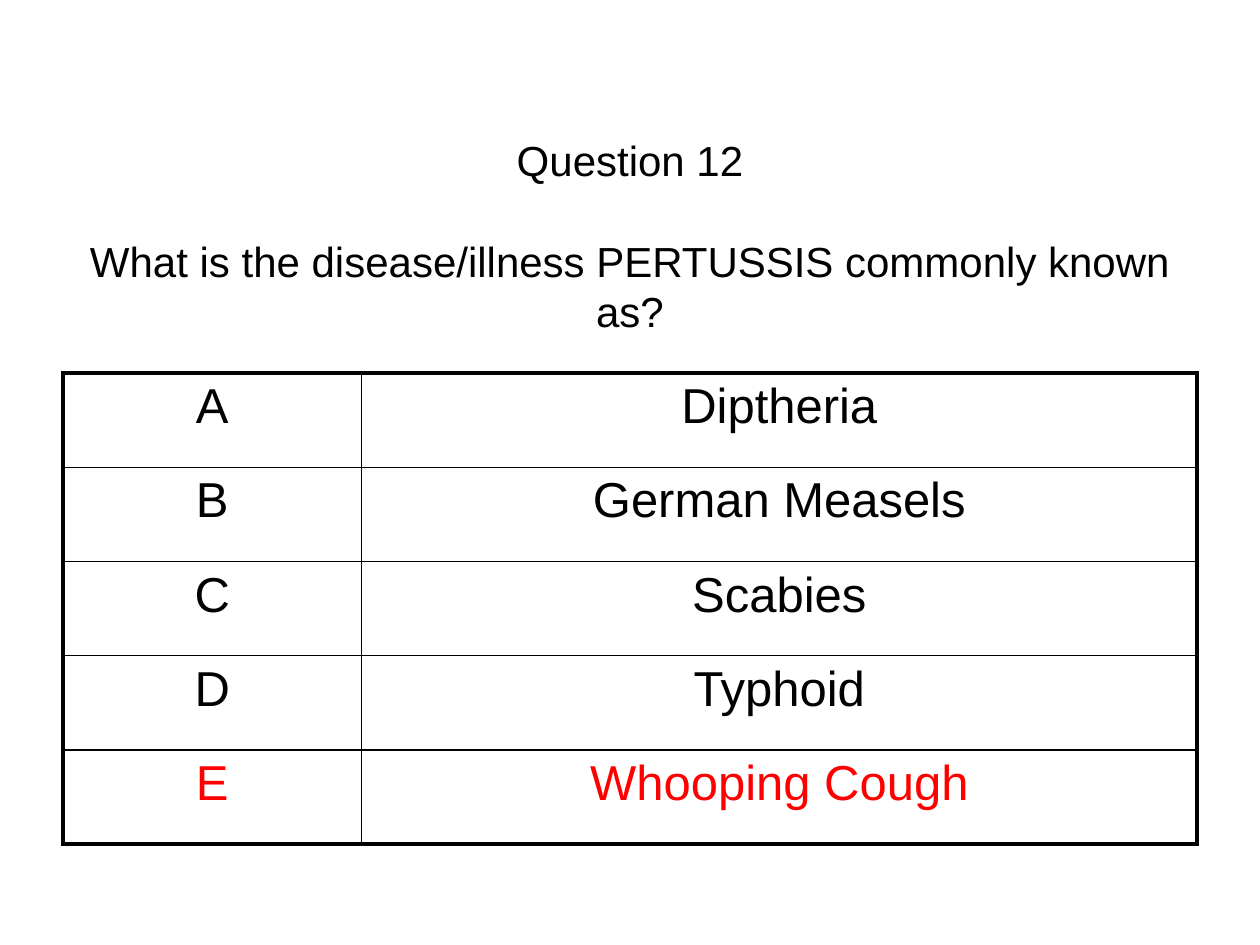
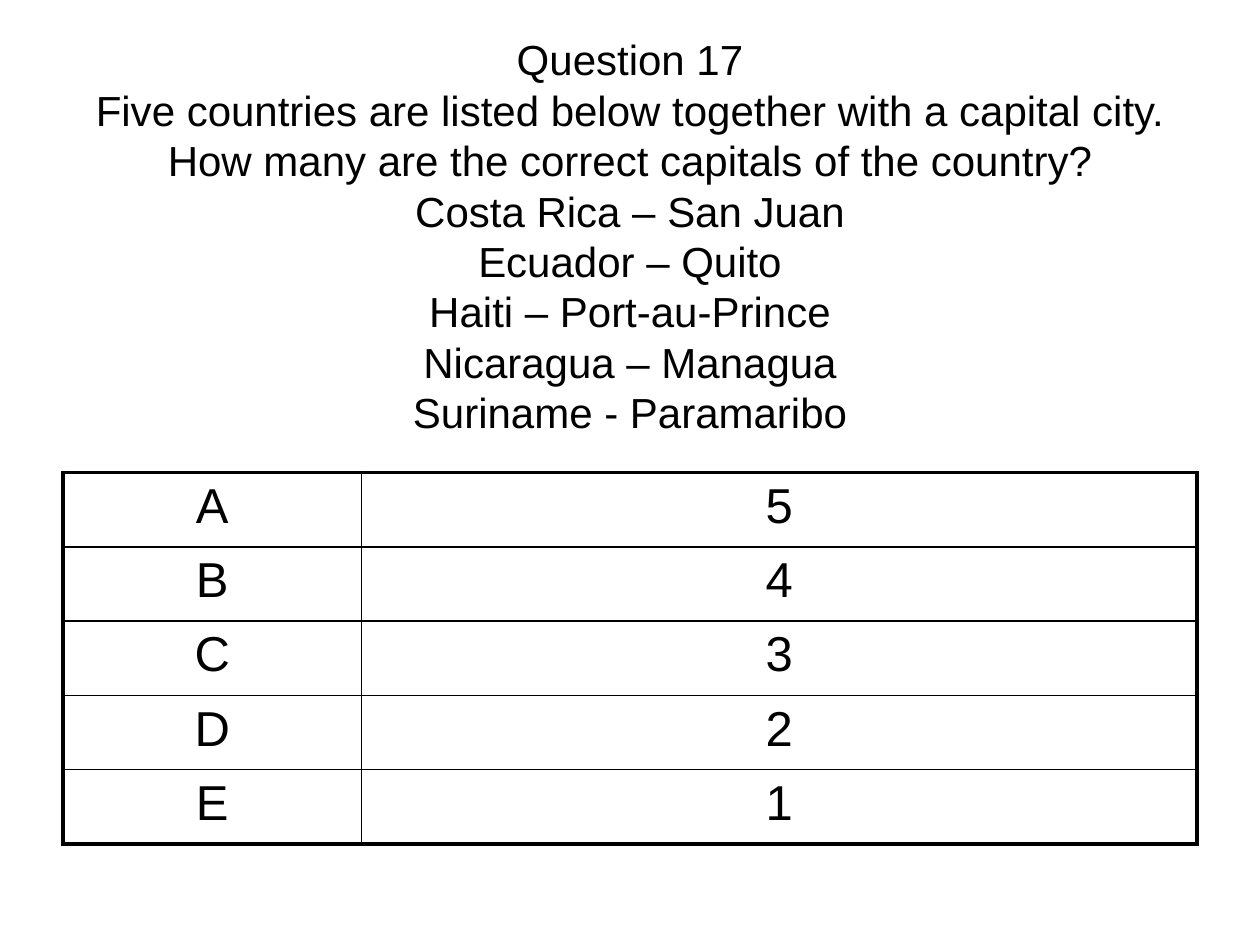
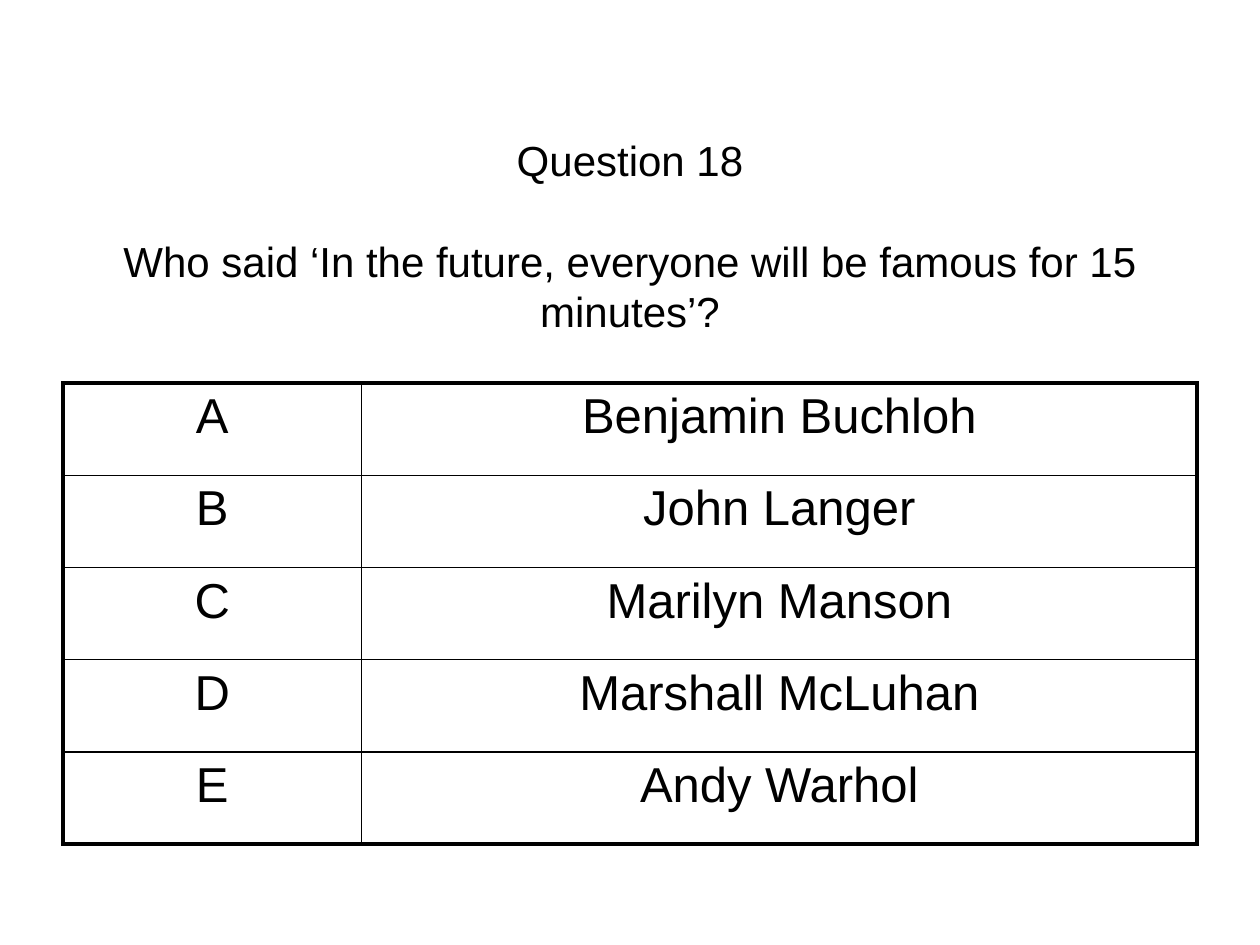
from pptx import Presentation
from pptx.dml.color import RGBColor
from pptx.enum.text import MSO_ANCHOR, MSO_AUTO_SIZE, PP_ALIGN
from pptx.oxml import parse_xml
from pptx.oxml.ns import nsdecls
from pptx.util import Pt

# Shared style
FONT = "Arial"
BLACK = "000000"
RED = "FF0000"
LEFT, WIDTH = 36, 648
TITLE_TOP, TITLE_HEIGHT = 21.6, 226
TITLE_SIZE, TITLE_PITCH = 24, 28.8
ANSWER_SIZE = 28
TABLE_BOTTOM = 482.4
COLUMN_WIDTHS = (170.6, 477.4)
OUTER_LINE, INNER_LINE = 2.25, 1

# Title paragraphs, blank lines after the heading, table top, answers, answer shown in red
questions = [
    (["Question 12",
      "What is the disease/illness PERTUSSIS commonly known as?"],
     1, 213.2,
     ["Diptheria", "German Measels", "Scabies", "Typhoid", "Whooping Cough"],
     "Whooping Cough"),
    (["Question 17",
      "Five countries are listed below together with a capital city. "
      "How many are the correct capitals of the country?",
      "Costa Rica – San Juan",
      "Ecuador – Quito",
      "Haiti – Port-au-Prince",
      "Nicaragua – Managua",
      "Suriname - Paramaribo"],
     0, 270,
     ["5", "4", "3", "2", "1"],
     None),
    (["Question 18",
      "Who said ‘In the future, everyone will be famous for 15 minutes’?"],
     1, 218.9,
     ["Benjamin Buchloh", "John Langer", "Marilyn Manson", "Marshall McLuhan", "Andy Warhol"],
     None),
]


def style_paragraph(paragraph, size, color):
    paragraph.alignment = PP_ALIGN.CENTER
    paragraph.font.name = FONT
    paragraph.font.size = Pt(size)
    paragraph.font.color.rgb = RGBColor.from_string(color)


def add_border(cell, side, width):
    cell._tc.get_or_add_tcPr().append(parse_xml(
        f'<a:ln{side} {nsdecls("a")} w="{Pt(width)}"><a:solidFill>'
        f'<a:srgbClr val="{BLACK}"/></a:solidFill></a:ln{side}>'))


deck = Presentation()
deck.slide_width, deck.slide_height = Pt(720), Pt(540)

for title_lines, blank_lines, table_top, answers, correct in questions:
    page = deck.slides.add_slide(deck.slide_layouts[5])

    # Question
    title = page.shapes.title
    title.left, title.top = Pt(LEFT), Pt(TITLE_TOP)
    title.width, title.height = Pt(WIDTH), Pt(TITLE_HEIGHT)
    frame = title.text_frame
    frame.text = "\n".join(title_lines)
    frame.word_wrap = True
    frame.auto_size = MSO_AUTO_SIZE.NONE
    frame.vertical_anchor = MSO_ANCHOR.MIDDLE
    for paragraph in frame.paragraphs:
        style_paragraph(paragraph, TITLE_SIZE, BLACK)
        paragraph.line_spacing = Pt(TITLE_PITCH)
    frame.paragraphs[0].space_after = Pt(blank_lines * TITLE_PITCH)

    # Answer table
    height = TABLE_BOTTOM - table_top
    table = page.shapes.add_table(len(answers), 2, Pt(LEFT), Pt(table_top),
                                  Pt(WIDTH), Pt(height)).table
    table.first_row = table.horz_banding = False
    for column, width in zip(table.columns, COLUMN_WIDTHS):
        column.width = Pt(width)

    last = len(answers) - 1
    for row, (letter, answer) in enumerate(zip("ABCDE", answers)):
        color = RED if answer == correct else BLACK
        for column, text in enumerate((letter, answer)):
            cell = table.cell(row, column)
            cell.text = text
            style_paragraph(cell.text_frame.paragraphs[0], ANSWER_SIZE, color)
            outer_sides = {"L": column == 0, "R": column == 1,
                           "T": row == 0, "B": row == last}
            for side, is_outer in outer_sides.items():
                add_border(cell, side, OUTER_LINE if is_outer else INNER_LINE)
            cell.fill.background()

deck.save("out.pptx")
